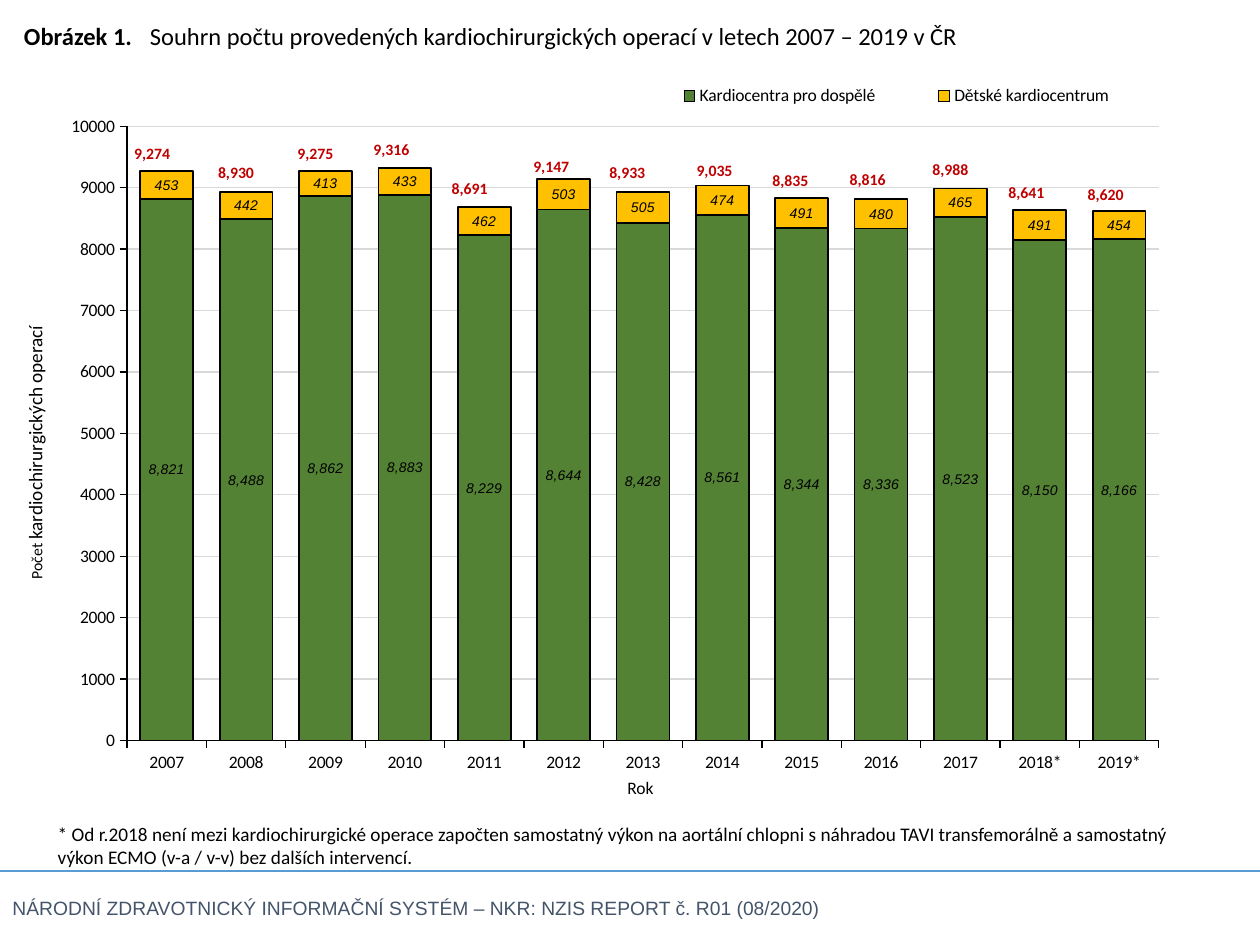
from dataclasses import dataclass

from lxml import etree
from pptx import Presentation
from pptx.chart.data import CategoryChartData
from pptx.dml.color import RGBColor
from pptx.enum.chart import (XL_CHART_TYPE, XL_LABEL_POSITION, XL_LEGEND_POSITION,
                             XL_MARKER_STYLE, XL_TICK_MARK)
from pptx.enum.shapes import MSO_CONNECTOR
from pptx.enum.text import MSO_ANCHOR, MSO_AUTO_SIZE, PP_ALIGN
from pptx.oxml.ns import qn
from pptx.oxml.xmlchemy import OxmlElement
from pptx.util import Pt

STACKED = XL_CHART_TYPE.COLUMN_STACKED
ABOVE, CENTER = XL_LABEL_POSITION.ABOVE, XL_LABEL_POSITION.CENTER
LEGEND_TOP = XL_LEGEND_POSITION.TOP
NO_MARKER = XL_MARKER_STYLE.NONE
TICK_OUT, TICK_NONE = XL_TICK_MARK.OUTSIDE, XL_TICK_MARK.NONE
STRAIGHT = MSO_CONNECTOR.STRAIGHT
TOP, LEFT = MSO_ANCHOR.TOP, PP_ALIGN.LEFT
NO_AUTOFIT = MSO_AUTO_SIZE.NONE

PX = 9144  # 100 px to the inch


@dataclass(frozen=True)
class Theme:
    ink: str = "000000"
    rule: str = "5B9BD5"
    footer: str = "44546A"
    grid: str = "D9D9D9"
    adults: str = "548235"
    children: str = "FFC000"
    total: str = "C00000"
    text_font: str = "Calibri"
    label_font: str = "Arial"
    title_size: int = 14
    note_size: int = 11
    axis_size: int = 10
    total_size: int = 9
    label_size: int = 8


THEME = Theme()

YEARS = [str(year) for year in range(2007, 2018)] + ["2018*", "2019*"]
ADULTS = [8821, 8488, 8862, 8883, 8229, 8644, 8428, 8561, 8344, 8336, 8523, 8150, 8166]
CHILDREN = [453, 442, 413, 433, 462, 503, 505, 474, 491, 480, 465, 491, 454]
TOTALS = [a + c for a, c in zip(ADULTS, CHILDREN)]
# Shift of each total's label from its place above the column, in thousandths of the chart
TOTAL_SHIFTS = [(-13, -4), (-9, -6), (-9, -4), (-12, -6), (-13, -4), (-11, 4), (-14, -6),
                (-7, 0), (-10, -4), (-12, -6), (-9, -6), (-12, -3), (-12, -3)]


def scaled(box):
    return [value * PX for value in box]


def style_font(font, size, color=THEME.ink, name=THEME.text_font, bold=False, italic=False):
    values = {"size": Pt(size), "name": name, "bold": bold, "italic": italic}
    for key, value in values.items():
        setattr(font, key, value)
    font.color.rgb = RGBColor.from_string(color)


def style_line(line, color, width):
    line.color.rgb = RGBColor.from_string(color)
    line.width = Pt(width)


def fill_text(shape, spans, wrap=True):
    """Write one paragraph from (text, font values) pairs."""
    frame = shape.text_frame
    values = {"word_wrap": wrap, "auto_size": NO_AUTOFIT, "vertical_anchor": TOP}
    for key, value in values.items():
        setattr(frame, key, value)
    para = frame.paragraphs[0]
    para.alignment = LEFT
    for text, font in spans:
        span = para.add_run()
        span.text = text
        style_font(span.font, **font)


def add_text(page, box, spans, wrap=True):
    shape = page.shapes.add_textbox(*scaled(box))
    fill_text(shape, spans, wrap)
    return shape


def add_title(page, box):
    title = page.shapes.title
    title.left, title.top, title.width, title.height = scaled(box)
    size = THEME.title_size
    fill_text(title, [
        ("Obrázek 1. \t", {"size": size, "bold": True}),
        ("Souhrn počtu provedených kardiochirurgických operací v letech 2007 – 2019 v ČR",
         {"size": size}),
    ])


def chart_element(parent, tag, **attributes):
    element = OxmlElement(f"c:{tag}")
    for key, value in attributes.items():
        element.set(key, str(value))
    parent.append(element)
    return element


def manual_layout(**values):
    layout = OxmlElement("c:layout")
    manual = chart_element(layout, "manualLayout")
    for tag, value in values.items():
        chart_element(manual, tag, val=value)
    return layout


def style_axes(chart):
    category, value = chart.category_axis, chart.value_axis
    for axis in (category, value):
        axis.major_tick_mark, axis.minor_tick_mark = TICK_OUT, TICK_NONE
        style_font(axis.tick_labels.font, THEME.axis_size)
        style_line(axis.format.line, THEME.ink, 0.75)
    scale = {"minimum_scale": 0, "maximum_scale": 10000, "major_unit": 1000,
             "has_major_gridlines": True}
    for key, number in scale.items():
        setattr(value, key, number)
    style_line(value.major_gridlines.format.line, THEME.grid, 0.75)
    value.tick_labels.number_format = "General"
    value.tick_labels.number_format_is_linked = False


def style_labels(labels, position, **font):
    values = {"show_value": True, "number_format": "#,##0",
              "number_format_is_linked": False, "position": position}
    for key, value in values.items():
        setattr(labels, key, value)
    style_font(labels.font, **font)


def move_totals_to_line(chart):
    """Turn the last column series into an unseen line that carries the totals."""
    bar_chart = chart.element.find(f".//{qn('c:barChart')}")
    series = bar_chart.findall(qn("c:ser"))[-1]
    invert = series.find(qn("c:invertIfNegative"))
    if invert is not None:
        series.remove(invert)
    line_chart = OxmlElement("c:lineChart")
    chart_element(line_chart, "grouping", val="standard")
    chart_element(line_chart, "varyColors", val=0)
    line_chart.append(series)
    chart_element(line_chart, "marker", val=1)
    for axis in bar_chart.findall(qn("c:axId")):
        chart_element(line_chart, "axId", val=axis.get("val"))
    bar_chart.addnext(line_chart)

    totals = chart.plots[1].series[0]
    totals.smooth = False
    totals.format.line.fill.background()
    totals.marker.style = NO_MARKER
    font = {"size": THEME.total_size, "color": THEME.total, "bold": True}
    style_labels(totals.data_labels, ABOVE, **font)
    for index in range(len(TOTALS)):
        label = totals.points[index].data_label
        style_font(label.font, **font)
        label.position = ABOVE
    for label, (x, y) in zip(series.iter(qn("c:dLbl")), TOTAL_SHIFTS):
        label.insert(1, manual_layout(x=x / 1000, y=y / 1000))
        number_format = OxmlElement("c:numFmt")
        number_format.set("formatCode", "#,##0")
        number_format.set("sourceLinked", "0")
        label.insert(2, number_format)


def style_legend(chart):
    chart.has_legend = True
    legend = chart.legend
    legend.position, legend.include_in_layout = LEGEND_TOP, False
    style_font(legend.font, THEME.axis_size)
    element = chart.element.find(f".//{qn('c:legend')}")
    for old in element.findall(qn("c:layout")):
        element.remove(old)
    entry = OxmlElement("c:legendEntry")
    chart_element(entry, "idx", val=2)
    chart_element(entry, "delete", val=1)
    element.insert(1, entry)
    element.insert(2, manual_layout(xMode="edge", yMode="edge", x=0.51, y=0.01, w=0.48, h=0.03))


def add_operations_chart(page, box):
    data = CategoryChartData(number_format="#,##0")
    data.categories = YEARS
    data.add_series("Kardiocentra pro dospělé", ADULTS)
    data.add_series("Dětské kardiocentrum", CHILDREN)
    data.add_series("Celkem kardiochirurgických operací", TOTALS)
    chart = page.shapes.add_chart(STACKED, *scaled(box), data).chart
    chart.has_title = False
    style_font(chart.font, THEME.axis_size)
    bars = chart.plots[0]
    bars.gap_width, bars.overlap, bars.vary_by_categories = 50, 100, False
    for series, color in zip(bars.series, (THEME.adults, THEME.children)):
        series.format.fill.solid()
        series.format.fill.fore_color.rgb = RGBColor.from_string(color)
        style_line(series.format.line, THEME.ink, 1)
        style_labels(series.data_labels, CENTER, size=THEME.label_size,
                     name=THEME.label_font, italic=True)
    move_totals_to_line(chart)
    style_axes(chart)
    style_legend(chart)
    plot_area = chart.element.find(f".//{qn('c:plotArea')}")
    for old in plot_area.findall(qn("c:layout")):
        plot_area.remove(old)
    plot_area.insert(0, manual_layout(layoutTarget="inner", xMode="edge", yMode="edge",
                                      x=0.067, y=0.068, w=0.916, h=0.866))


def add_axis_titles(page, value_box, category_box):
    small, large = {"size": THEME.total_size}, {"size": THEME.note_size}
    title = add_text(page, value_box, [("Počet ", small), ("kardiochirurgických", large),
                                       (" ", small), ("operací", large)], wrap=False)
    title.rotation = 270
    add_text(page, category_box, [("Rok", {"size": THEME.axis_size})], wrap=False)


def add_footer(page, box):
    left, top, width, height = box
    rule = page.shapes.add_connector(STRAIGHT, *scaled((left, top, left + width, top)))
    style_line(rule.line, THEME.rule, 1)
    etree.SubElement(rule._element.spPr, qn("a:effectLst"))
    report = add_text(page, (left, top + 14, 809, height - 14), [
        ("NÁRODNÍ ZDRAVOTNICKÝ INFORMAČNÍ SYSTÉM – NKR: NZIS REPORT č. R01 (08/2020)",
         {"size": THEME.note_size, "color": THEME.footer, "name": THEME.label_font})])
    para = report.text_frame.paragraphs[0]
    para.line_spacing, para.space_after = 1.07, Pt(8)


# Whole slide
deck = Presentation()
deck.slide_width, deck.slide_height = scaled((1000, 750))
page = deck.slides.add_slide(deck.slide_layouts[5])
add_footer(page, (0, 691, 1000, 42))
add_title(page, (9, 12, 974, 34))
add_operations_chart(page, (41, 62, 894, 563))
add_axis_titles(page, (-84, 343, 224, 29), (488, 612, 41, 27))
# Footnote
add_text(page, (36, 648, 927, 47), [
    ("* Od r.2018 není mezi kardiochirurgické operace započten samostatný výkon na aortální "
     "chlopni s náhradou TAVI transfemorálně a samostatný výkon ECMO (v-a / v-v) bez dalších "
     "intervencí.", {"size": THEME.note_size})])
deck.save("out.pptx")
